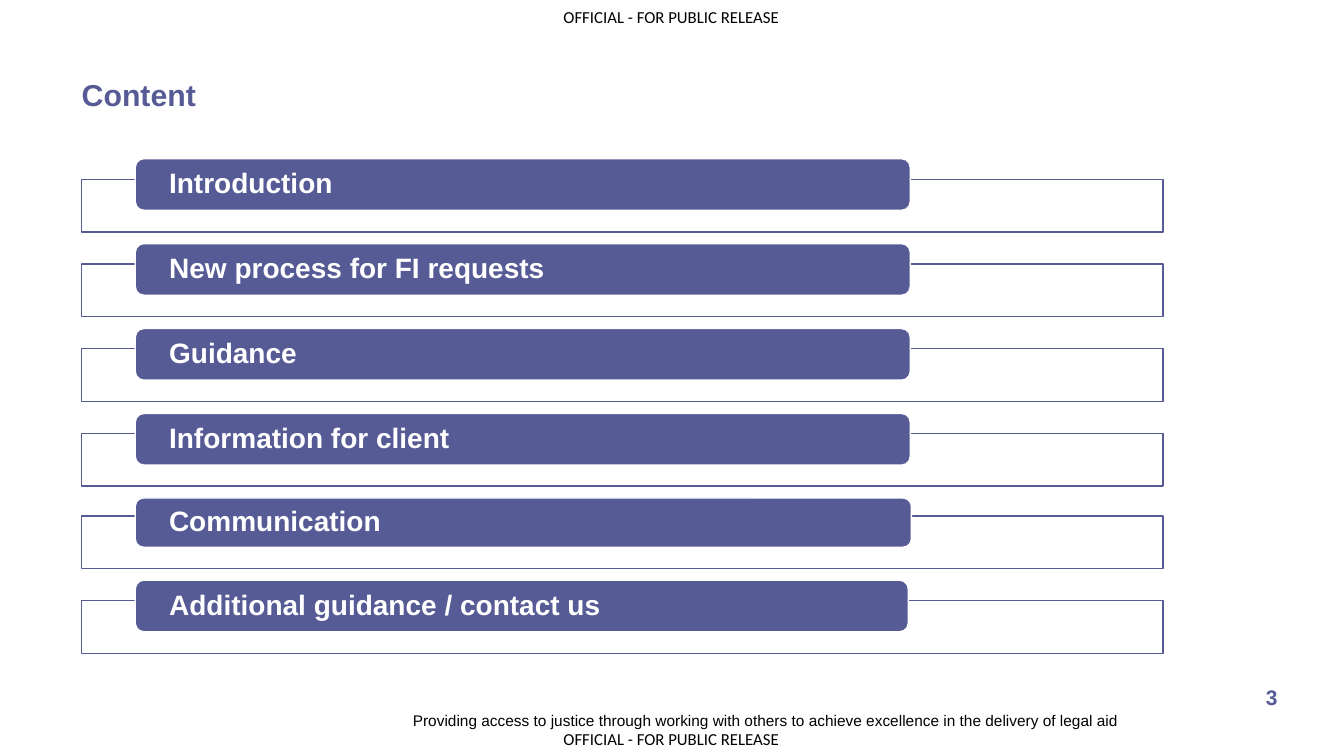
"""Build the agenda slide with six framed topic bars."""
from dataclasses import dataclass

from pptx import Presentation
from pptx.dml.color import RGBColor
from pptx.enum.shapes import MSO_SHAPE
from pptx.enum.text import MSO_ANCHOR, MSO_AUTO_SIZE, PP_ALIGN
from pptx.shapes.autoshape import Shape
from pptx.slide import Slide
from pptx.text.text import TextFrame
from pptx.util import Cm, Pt

RECTANGLE, ROUNDED = MSO_SHAPE.RECTANGLE, MSO_SHAPE.ROUNDED_RECTANGLE
TOP, MIDDLE = MSO_ANCHOR.TOP, MSO_ANCHOR.MIDDLE
LEFT, CENTER, RIGHT = PP_ALIGN.LEFT, PP_ALIGN.CENTER, PP_ALIGN.RIGHT
NO_AUTOFIT = MSO_AUTO_SIZE.NONE

COLORS = {"brand": "565B96", "paper": "FFFFFF", "ink": "000000"}
TITLE_ONLY_LAYOUT = 5
MARGIN_LEFT = 2.06
MARKING = "OFFICIAL - FOR PUBLIC RELEASE"


@dataclass(frozen=True)
class TextStyle:
    """Hold the look of a one-line text."""

    size: float
    color: str
    bold: bool = False
    font: str = "Arial"
    align: PP_ALIGN = LEFT
    anchor: MSO_ANCHOR = TOP
    inset: float = 0
    wrap: bool = True
    line_spacing: float = 1.0


@dataclass(frozen=True)
class Topic:
    """Hold one agenda entry, with lengths in centimetres."""

    label: str
    frame_top: float
    bar_top: float
    bar_width: float = 19.53
    bar_height: float = 1.3


@dataclass(frozen=True)
class Caption:
    """Hold one free text, with its box in centimetres."""

    text: str
    box: tuple[float, float, float, float]
    style: TextStyle


TITLE_STYLE = TextStyle(21.6, "brand", bold=True)
TOPIC_STYLE = TextStyle(20, "paper", bold=True, anchor=MIDDLE, inset=0.79, line_spacing=0.9)
MARKING_STYLE = TextStyle(12, "ink", font="Calibri", wrap=False)
MOTTO_STYLE = TextStyle(11, "ink", align=RIGHT, anchor=MIDDLE)
NUMBER_STYLE = TextStyle(15, "brand", bold=True, align=CENTER)

TOPICS = [
    Topic("Introduction", 4.52, 4.0),
    Topic("New process for FI requests", 6.65, 6.14),
    Topic("Guidance", 8.79, 8.28),
    Topic("Information for client", 10.92, 10.42),
    Topic("Communication", 13.0, 12.55, bar_width=19.56, bar_height=1.24),
    Topic("Additional guidance / contact us", 15.14, 14.62, bar_width=19.48),
]

CAPTIONS = [
    Caption(MARKING, (14.2, 0.18, 5.54, 0.51), MARKING_STYLE),
    Caption(MARKING, (14.2, 18.36, 5.54, 0.51), MARKING_STYLE),
    Caption(
        "Providing access to justice through working with others "
        "to achieve excellence in the delivery of legal aid",
        (8.18, 17.91, 20.02, 0.51),
        MOTTO_STYLE,
    ),
    Caption("3", (31.67, 17.25, 0.76, 0.71), NUMBER_STYLE),
]


def color(name: str) -> RGBColor:
    """Return a named colour."""
    return RGBColor.from_string(COLORS[name])


def write(frame: TextFrame, text: str, style: TextStyle) -> None:
    """Put one styled paragraph in a text frame."""
    frame.text = text
    frame.auto_size = NO_AUTOFIT
    frame.word_wrap = style.wrap
    frame.vertical_anchor = style.anchor
    frame.margin_left = frame.margin_right = Cm(style.inset)
    frame.margin_top = frame.margin_bottom = 0
    paragraph = frame.paragraphs[0]
    paragraph.alignment = style.align
    paragraph.line_spacing = style.line_spacing
    paragraph.font.name = style.font
    paragraph.font.size = Pt(style.size)
    paragraph.font.bold = style.bold
    paragraph.font.color.rgb = color(style.color)


def add_panel(
    slide: Slide, kind: MSO_SHAPE, box: tuple[float, float, float, float], fill: str, line: str
) -> Shape:
    """Draw a filled and outlined shape."""
    panel = slide.shapes.add_shape(kind, *map(Cm, box))
    panel.shadow.inherit = False
    panel.fill.solid()
    panel.fill.fore_color.rgb = color(fill)
    panel.line.color.rgb = color(line)
    panel.line.width = Pt(1)
    return panel


def add_topic(slide: Slide, topic: Topic) -> None:
    """Draw a frame with its labelled bar on top."""
    add_panel(slide, RECTANGLE, (MARGIN_LEFT, topic.frame_top, 27.25, 1.33), "paper", "brand")
    bar_box = (3.41, topic.bar_top, topic.bar_width, topic.bar_height)
    bar = add_panel(slide, ROUNDED, bar_box, "brand", "paper")
    write(bar.text_frame, topic.label, TOPIC_STYLE)


def add_caption(slide: Slide, caption: Caption) -> None:
    """Draw a free text."""
    box = slide.shapes.add_textbox(*map(Cm, caption.box))
    write(box.text_frame, caption.text, caption.style)


def main() -> None:
    """Build and save the slide."""
    deck = Presentation()
    deck.slide_width, deck.slide_height = Cm(33.87), Cm(19.05)
    slide = deck.slides.add_slide(deck.slide_layouts[TITLE_ONLY_LAYOUT])

    title = slide.shapes.title
    title.left, title.top = Cm(MARGIN_LEFT), Cm(1.93)
    title.width, title.height = Cm(21.44), Cm(0.97)
    write(title.text_frame, "Content", TITLE_STYLE)

    for topic in TOPICS:
        add_topic(slide, topic)
    for caption in CAPTIONS:
        add_caption(slide, caption)
    deck.save("out.pptx")


if __name__ == "__main__":
    main()
